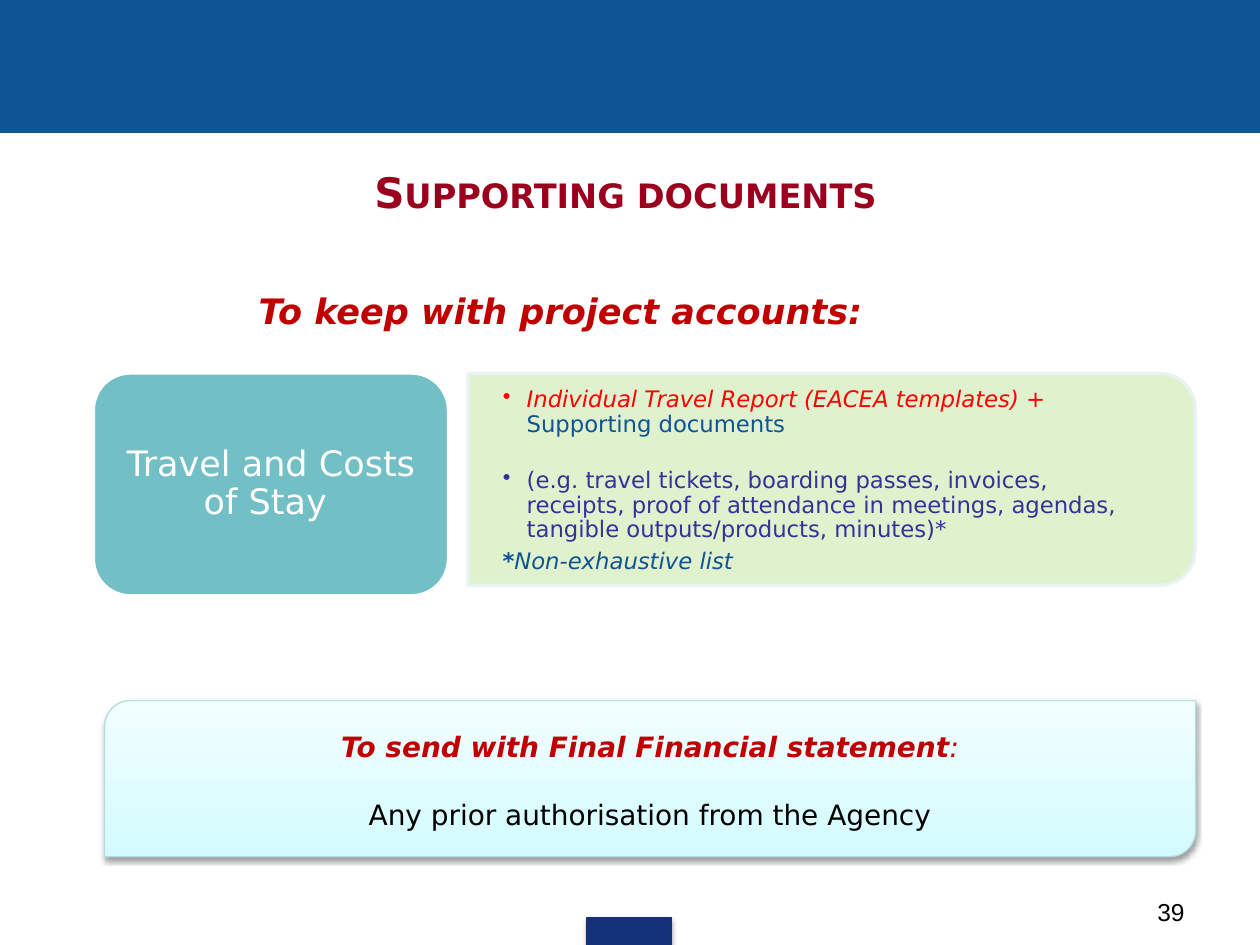
from lxml.etree import SubElement
from pptx import Presentation
from pptx.dml.color import RGBColor
from pptx.enum.shapes import MSO_SHAPE
from pptx.enum.text import MSO_ANCHOR, PP_ALIGN
from pptx.oxml.ns import qn
from pptx.util import Inches, Pt

BLUE = RGBColor(0x0F, 0x54, 0x94)
NAVY = RGBColor(0x13, 0x31, 0x76)
INDIGO = RGBColor(0x33, 0x33, 0x99)
MAROON = RGBColor(0x9A, 0x00, 0x1D)
DARK_RED = RGBColor(0xC0, 0x00, 0x00)
RED = RGBColor(0xFF, 0x00, 0x00)
TEAL = RGBColor(0x72, 0xBF, 0xC5)
GREEN = RGBColor(0xDD, 0xF0, 0xC8)
PALE = RGBColor(0xE7, 0xF3, 0xF4)
ICE = RGBColor(0xD3, 0xFB, 0xFF)
ICE_LIGHT = RGBColor(0xF2, 0xFE, 0xFF)
ICE_EDGE = RGBColor(0xB6, 0xDC, 0xDF)
WHITE = RGBColor(0xFF, 0xFF, 0xFF)
BLACK = RGBColor(0, 0, 0)
FONT = "DejaVu Sans"


def run(text, size, color, **style):
    return text, dict(name=FONT, size=Pt(size), **style), color


# Content: each text is a list of paragraphs, each paragraph a list of runs
TITLE = [[run("Supporting documents", 24, MAROON, bold=True)]]
KEEP = [[run("To keep with project accounts:", 20, DARK_RED, bold=True, italic=True)]]
CATEGORY = [[run("Travel and Costs of Stay ", 20, WHITE)]]
EVIDENCE = [
    [run("Individual Travel Report (EACEA templates) + ", 13, RED, italic=True),
     run("Supporting documents", 13, BLUE)],
    [run("(e.g. travel tickets, boarding passes, invoices, receipts, proof of "
         "attendance in meetings, agendas, tangible outputs/products, minutes)*",
         13, INDIGO)],
]
FOOTNOTE = [[run("*", 13, BLUE, bold=True, italic=True),
             run("Non-exhaustive list", 13, BLUE, italic=True)]]
SEND = [
    [run("To send with Final Financial statement", 16, DARK_RED, bold=True, italic=True),
     run(":", 16, DARK_RED, italic=True)],
    [run("Any prior authorisation from the Agency", 16, BLACK)],
]
PAGE = [[("39", dict(name="Arial", size=Pt(14)), BLACK)]]


def write(sp, paragraphs, align=PP_ALIGN.CENTER, anchor=MSO_ANCHOR.TOP,
          spacing=None, gap=0, bullet=False, indent=0, insets=None):
    tf = sp.text_frame
    tf.word_wrap = True
    tf.vertical_anchor = anchor
    for side, value in (insets or {}).items():
        setattr(tf, "margin_" + side, Inches(value))
    for i, runs in enumerate(paragraphs):
        p = tf.paragraphs[0] if i == 0 else tf.add_paragraph()
        p.alignment = align
        if spacing:
            p.line_spacing = spacing
        if i:
            p.space_before = Pt(gap)
        pPr = p._p.get_or_add_pPr()
        pPr.set("marL", str(Inches(indent)))
        if bullet:
            pPr.set("indent", str(-Inches(indent)))
            SubElement(pPr, qn("a:buChar"), char="•")
        for text, style, color in runs:
            r = p.add_run()
            r.text = text
            for key, value in style.items():
                setattr(r.font, key, value)
            r.font.color.rgb = color


def add_text(box, paragraphs, **layout):
    sp = s.shapes.add_textbox(*map(Inches, box))
    write(sp, paragraphs, **layout)
    return sp


def add_box(kind, box, fill, line, width=0.75):
    sp = s.shapes.add_shape(kind, *map(Inches, box))
    sp.shadow.inherit = False
    if fill:
        sp.fill.solid()
        sp.fill.fore_color.rgb = fill
    sp.line.color.rgb = line
    sp.line.width = Pt(width)
    return sp


def add_shadow(sp, alpha):
    effects = sp._element.spPr.find(qn("a:effectLst"))
    shadow = SubElement(effects, qn("a:outerShdw"), blurRad=str(Pt(3.1)),
                        dist=str(Pt(1.7)), dir="5400000", rotWithShape="0")
    color = SubElement(shadow, qn("a:srgbClr"), val="000000")
    SubElement(color, qn("a:alpha"), val=str(alpha * 1000))


prs = Presentation()
prs.slide_width, prs.slide_height = Inches(10), Inches(7.5)
s = prs.slides.add_slide(prs.slide_layouts[6])

# Header band and footer tab
add_box(MSO_SHAPE.RECTANGLE, (0, 0, 10, 1.05), BLUE, BLUE)
add_shadow(add_box(MSO_SHAPE.RECTANGLE, (4.66, 7.28, 0.67, 0.22), NAVY, NAVY), 35)

# Title in small capitals, and page number
title = add_text((1.77, 1.15, 6, 0.62), TITLE, anchor=MSO_ANCHOR.BOTTOM, indent=0.39)
title.text_frame.paragraphs[0].runs[0].font._element.set("cap", "small")
add_text((7.17, 7.07, 2.33, 0.32), PAGE, align=PP_ALIGN.RIGHT)

# Evidence panel: turned so that its rounded corners face right
panel = add_box(MSO_SHAPE.ROUND_2_SAME_RECTANGLE, (5.76, 0.92, 1.68, 5.77),
                GREEN, PALE, 2)
panel.rotation = 90
for color in panel._element.spPr.iter(qn("a:srgbClr")):
    SubElement(color, qn("a:alpha"), val="90000")
add_text((3.72, 3.04, 5.69, 1.52), EVIDENCE, align=PP_ALIGN.LEFT, spacing=0.9,
         gap=18, bullet=True, indent=0.19,
         insets=dict(left=0.27, right=0.27, top=0.04, bottom=0.04))
add_text((3.89, 4.29, 2.16, 0.32), FOOTNOTE, align=PP_ALIGN.LEFT)

# Cost category
category = add_box(MSO_SHAPE.ROUNDED_RECTANGLE, (0.74, 2.96, 2.82, 1.77), TEAL, WHITE, 2)
write(category, CATEGORY, anchor=MSO_ANCHOR.MIDDLE, spacing=0.9)

add_text((0.67, 2.25, 7.56, 0.45), KEEP)

# Final statement panel
send = add_box(MSO_SHAPE.ROUND_2_DIAG_RECTANGLE, (0.83, 5.56, 8.66, 1.24), None, ICE_EDGE)
send.fill.gradient()
send.fill.gradient_angle = 90
for stop, color in zip(send.fill.gradient_stops, (ICE, ICE_LIGHT)):
    stop.color.rgb = color
add_shadow(send, 38)
write(send, SEND, anchor=MSO_ANCHOR.MIDDLE, gap=19.5, insets=dict(top=0.08))

prs.save("out.pptx")
